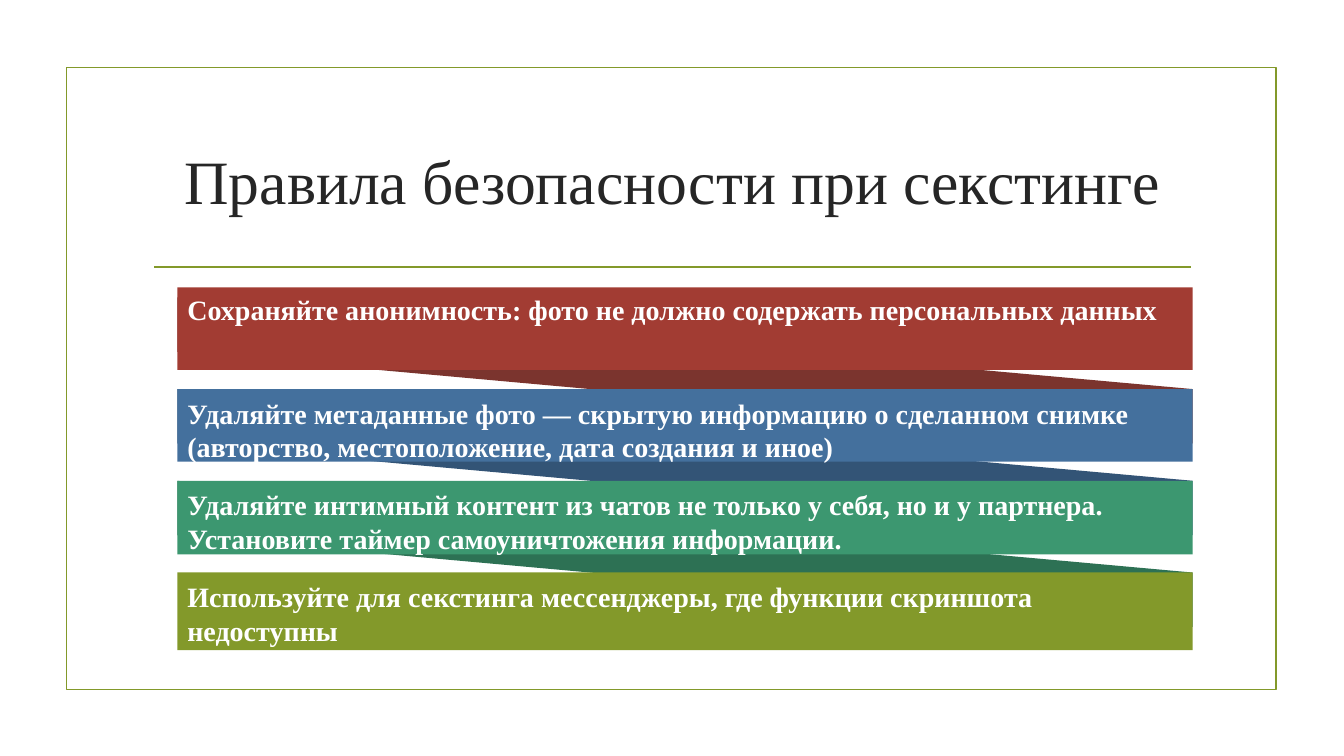
from lxml import etree
from pptx import Presentation
from pptx.dml.color import RGBColor
from pptx.enum import shapes, text
from pptx.oxml import ns
from pptx.util import Inches, Pt

OLIVE = RGBColor(0x83, 0x99, 0x2A)
RED = RGBColor(0xA2, 0x3C, 0x33)
BLUE = RGBColor(0x44, 0x70, 0x9D)
GREEN = RGBColor(0x3C, 0x97, 0x70)
DARK_RED = RGBColor(0x7B, 0x34, 0x2E)
DARK_BLUE = RGBColor(0x33, 0x54, 0x76)
DARK_GREEN = RGBColor(0x2D, 0x71, 0x54)
INK = RGBColor(0x26, 0x26, 0x26)
WHITE = RGBColor(0xFF, 0xFF, 0xFF)

BAR_LEFT, BAR_RIGHT = 1.76, 11.83
STEP = 0.91  # distance between bars
RIBBON_DEPTH = 0.54

# top, height, top inset, fill, wording
RULES = [
    (2.85, 0.82, 0.05, RED,
     "Сохраняйте анонимность: фото не должно содержать персональных данных"),
    (3.86, 0.72, 0.07, BLUE,
     "Удаляйте метаданные фото — скрытую информацию о сделанном снимке "
     "(авторство, местоположение, дата создания и иное)"),
    (3.86 + STEP, 0.73, 0.07, GREEN,
     "Удаляйте интимный контент из чатов не только у себя, но и у партнера. "
     "Установите таймер самоуничтожения информации."),
    (3.86 + 2 * STEP, 0.77, 0.07, OLIVE,
     "Используйте для секстинга мессенджеры, где функции скриншота недоступны"),
]


def write(frame, wording, **font_format):
    para = frame.paragraphs[0]
    span = para.add_run()
    span.text = wording
    span.font.name = "Times New Roman"
    span.font.color.rgb = font_format.pop("color")
    for name, value in font_format.items():
        setattr(span.font, name, value)
    return para


def paint(shape, color):
    shape.shadow.inherit = False
    shape.fill.solid()
    shape.fill.fore_color.rgb = color
    shape.line.fill.background()


deck = Presentation()
deck.slide_width, deck.slide_height = Inches(13.33), Inches(7.5)
page = deck.slides.add_slide(deck.slide_layouts.get_by_name("Title Only"))

# Frame and rule under the title
border = page.shapes.add_shape(shapes.MSO_SHAPE.RECTANGLE, Inches(0.66),
                               Inches(0.67), Inches(12), Inches(6.17))
border.shadow.inherit = False
border.fill.background()
divider = page.shapes.add_connector(shapes.MSO_CONNECTOR.STRAIGHT, Inches(1.53),
                                    Inches(2.65), Inches(11.81), Inches(2.65))
etree.SubElement(divider.element.spPr, ns.qn("a:effectLst"))
for outline in (border, divider):
    outline.line.color.rgb = OLIVE
    outline.line.width = Pt(1.25)

# Title
title = page.shapes.title
title.left, title.top = Inches(1.42), Inches(1.07)
title.width, title.height = Inches(10.5), Inches(1.43)
title.text_frame.vertical_anchor = text.MSO_ANCHOR.MIDDLE
para = write(title.text_frame, "Правила безопасности при секстинге",
             size=Pt(44), color=INK)
para.alignment = text.PP_ALIGN.CENTER

# Slanted ribbons, each leading down to the next bar
for rule, color in zip(RULES[1:], (DARK_RED, DARK_BLUE, DARK_GREEN)):
    right_top = rule[0]
    left_top = right_top - STEP
    builder = page.shapes.build_freeform(Inches(BAR_LEFT), Inches(left_top))
    builder.add_line_segments([
        (Inches(BAR_RIGHT), Inches(right_top)),
        (Inches(BAR_RIGHT), Inches(right_top + RIBBON_DEPTH)),
        (Inches(BAR_LEFT), Inches(left_top + RIBBON_DEPTH)),
    ], close=True)
    paint(builder.convert_to_shape(), color)

# Bars with the rules
for top, height, inset, color, wording in RULES:
    bar = page.shapes.add_shape(shapes.MSO_SHAPE.RECTANGLE, Inches(BAR_LEFT),
                                Inches(top), Inches(BAR_RIGHT - BAR_LEFT),
                                Inches(height))
    paint(bar, color)
    frame_format = {
        "word_wrap": True,
        "vertical_anchor": text.MSO_ANCHOR.TOP,
        "margin_left": Inches(0.1),
        "margin_right": Inches(0.2),
        "margin_top": Inches(inset),
        "margin_bottom": 0,
    }
    for name, value in frame_format.items():
        setattr(bar.text_frame, name, value)
    para = write(bar.text_frame, wording, size=Pt(20), bold=True, color=WHITE)
    para.alignment = text.PP_ALIGN.LEFT

deck.save("out.pptx")
